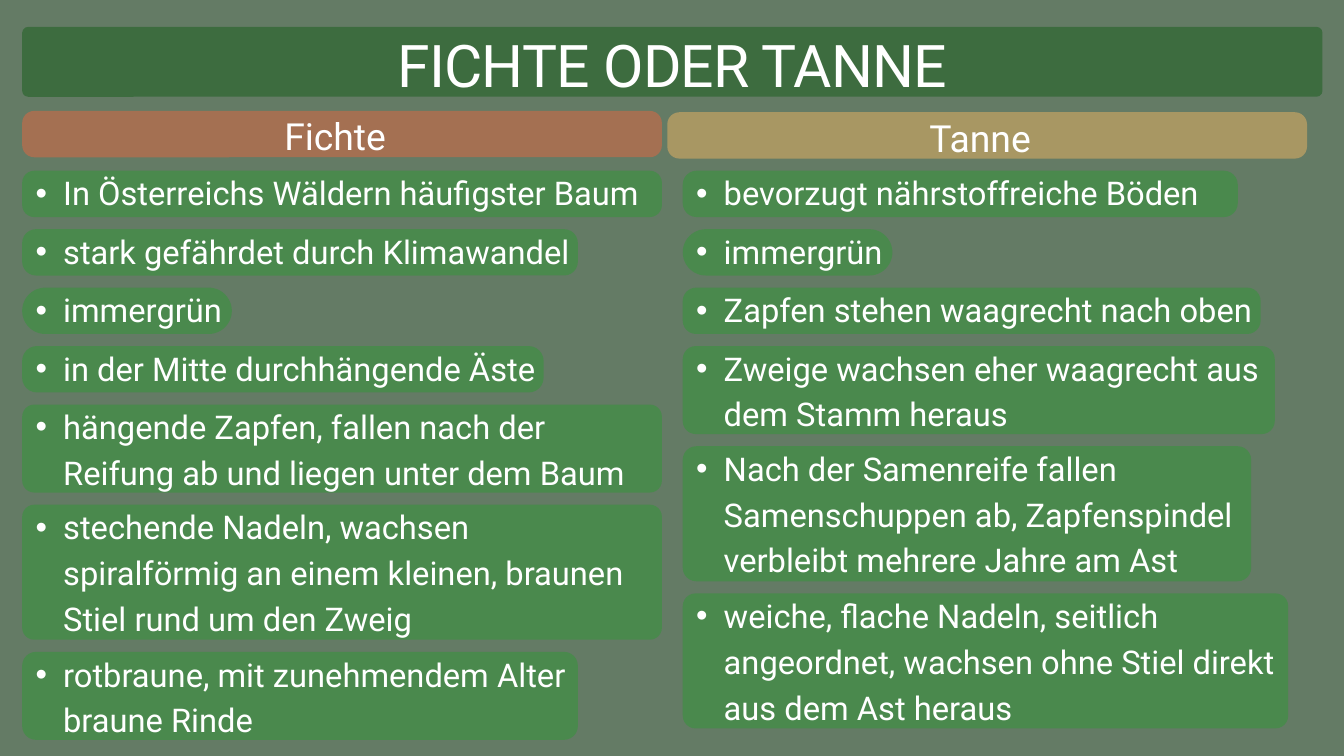
"""Builds a one-slide comparison of spruce and fir in German."""
import pptx
import pptx.dml.color
import pptx.enum.shapes
import pptx.enum.text
import pptx.util
from lxml import etree

Inches, Pt = pptx.util.Inches, pptx.util.Pt

HEADLINE = "FICHTE ODER TANNE"
COLUMNS = [
    {
        "name": "Fichte", "accent": "spruce", "header": (0.33, 1.65), "left": 0.33,
        "facts": [
            ("In Österreichs Wäldern häufigster Baum", 1, 9.52, 11.68),
            ("stark gefährdet durch Klimawandel", 1, 8.27, 8.38),
            ("immergrün", 1, 3.12, 8.38),
            ("in der Mitte durchhängende Äste", 1, 7.76, 8.38),
            ("hängende Zapfen, fallen nach der Reifung ab und liegen unter dem Baum", 2, 9.52, 9.59),
            ("stechende Nadeln, wachsen spiralförmig an einem kleinen, braunen Stiel rund um den Zweig", 3, 9.52, 9.59),
            ("rotbraune, mit zunehmendem Alter braune Rinde", 2, 8.27, 9.6),
        ],
    },
    {
        "name": "Tanne", "accent": "fir", "header": (9.93, 1.67), "left": 10.16,
        "facts": [
            ("bevorzugt nährstoffreiche Böden", 1, 8.26, 8.38),
            ("immergrün", 1, 3.12, 8.38),
            ("Zapfen stehen waagrecht nach oben", 1, 8.6, 8.95),
            ("Zweige wachsen eher waagrecht aus dem Stamm heraus", 2, 8.81, 9.74),
            ("Nach der Samenreife fallen Samenschuppen ab, Zapfenspindel verbleibt mehrere Jahre am Ast", 3, 8.46, 9.76),
            ("weiche, flache Nadeln, seitlich angeordnet, wachsen ohne Stiel direkt aus dem Ast heraus", 3, 9.01, 9.74),
        ],
    },
]
THEME = {
    "font": "Roboto",
    "colours": {
        "background": "647B65", "banner": "3D6C3F", "spruce": "A47052",
        "fir": "A89763", "fact": "4A894D", "text": "FFFFFF",
    },
    "sizes": {"headline": (63, 75), "header": (40, 56), "fact": (35, 49)},
}
FACTS_TOP, FACT_GAP, LINE_HEIGHT = 2.54, 0.18, 0.68
PANEL_HEIGHTS = {1: 0.69, 2: 1.31, 3: 2.01}
CORNER_FACTOR = 1.71
FRAME = {
    "margin_left": 0, "margin_right": 0, "margin_top": 0, "margin_bottom": 0,
    "word_wrap": True,
    "auto_size": pptx.enum.text.MSO_AUTO_SIZE.NONE,
    "vertical_anchor": pptx.enum.text.MSO_ANCHOR.TOP,
}


def colour(role):
    return pptx.dml.color.RGBColor.from_string(THEME["colours"][role])


def apply(target, values):
    for name, value in values.items():
        setattr(target, name, value)


def add_panel(slide, left, top, width, height, role):
    panel = slide.shapes.add_shape(
        pptx.enum.shapes.MSO_SHAPE.ROUNDED_RECTANGLE,
        *map(Inches, (left, top, width, height)))
    panel.adjustments[0] = min(0.5, CORNER_FACTOR / width / height)
    panel.shadow.inherit = False
    panel.fill.solid()
    panel.fill.fore_color.rgb = colour(role)
    panel.line.fill.background()
    return panel


def write(holder, text, style, align):
    size, spacing = THEME["sizes"][style]
    apply(holder.text_frame, FRAME)
    paragraph = holder.text_frame.paragraphs[0]
    apply(paragraph, {"alignment": align, "line_spacing": Pt(spacing)})
    run = paragraph.add_run()
    run.text = text
    apply(run.font, {"name": THEME["font"], "size": Pt(size)})
    run.font.color.rgb = colour("text")
    return paragraph


def add_text(slide, left, top, width, height, text, style):
    box = slide.shapes.add_textbox(*map(Inches, (left, top, width, height)))
    return write(box, text, style, pptx.enum.text.PP_ALIGN.LEFT)


def add_bullet(paragraph):
    paragraph.level = 1
    properties = paragraph._p.get_or_add_pPr()
    properties.set("marL", str(Inches(0.83)))
    properties.set("indent", str(Inches(-0.41)))
    for tag, attribute, value in (("buFont", "typeface", "Arial"), ("buChar", "char", "•")):
        etree.SubElement(properties, pptx.oxml.ns.qn("a:" + tag)).set(attribute, value)


def add_headline(slide):
    title = slide.shapes.title
    places = zip(("left", "top", "width", "height"), map(Inches, (0.33, 0.43, 19.35, 1.05)))
    apply(title, dict(places))
    paragraph = write(title, HEADLINE, "headline", pptx.enum.text.PP_ALIGN.CENTER)
    paragraph.runs[0]._r.get_or_add_rPr().set("spc", "-80")
    banner = add_panel(slide, 0.33, 0.4, 19.35, 1.04, "banner")
    title._element.addprevious(banner._element)


def add_column(slide, column):
    left, top = column["header"]
    add_panel(slide, left, top, 9.52, 0.69, column["accent"])
    add_text(slide, left + 3.9, top - 0.07, 1.72, 0.75, column["name"], "header")
    left, top = column["left"], FACTS_TOP
    for fact, lines, panel_width, text_width in column["facts"]:
        height = PANEL_HEIGHTS[lines]
        add_panel(slide, left, top, panel_width, height, "fact")
        add_bullet(add_text(slide, left - 0.22, top - 0.06, text_width,
                            lines * LINE_HEIGHT, fact, "fact"))
        top += height + FACT_GAP


def main():
    deck = pptx.Presentation()
    apply(deck, {"slide_width": Inches(20), "slide_height": Inches(11.25)})
    slide = deck.slides.add_slide(deck.slide_layouts[5])
    slide.background.fill.solid()
    slide.background.fill.fore_color.rgb = colour("background")
    add_headline(slide)
    for column in COLUMNS:
        add_column(slide, column)
    deck.save("out.pptx")


if __name__ == "__main__":
    main()
